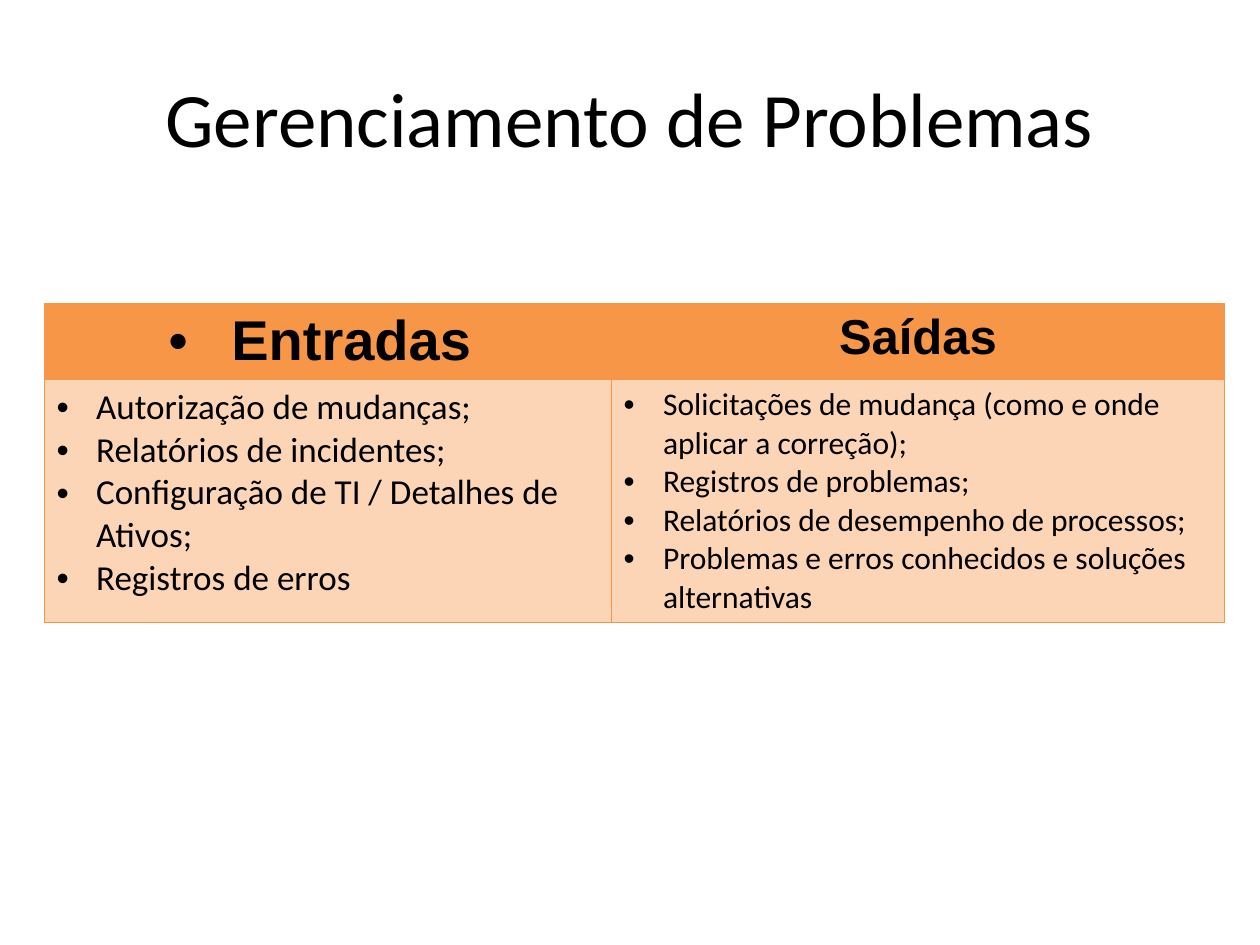
import pptx
import pptx.util
import pptx.dml.color
import pptx.enum.text
import pptx.oxml
import pptx.oxml.ns
from lxml import etree

Pt = pptx.util.Pt
ALIGN = pptx.enum.text.PP_ALIGN

# Content: one entry per table column
TITLE = "Gerenciamento de Problemas"
COLUMNS = [
    {"width": 324, "heading": "Entradas ", "heading_size": 32, "heading_indent": 36,
     "item_size": 20,
     "items": ["Autorização de mudanças;",
               "Relatórios de incidentes;",
               "Configuração de TI / Detalhes de Ativos;",
               "Registros de erros"]},
    {"width": 350.64, "heading": "Saídas", "heading_size": 28, "heading_indent": 0,
     "item_size": 18,
     "items": ["Solicitações de mudança (como e onde aplicar a correção);",
               "Registros de problemas;",
               "Relatórios de desempenho de processos;",
               "Problemas e erros conhecidos e soluções alternativas"]},
]
ROW_HEIGHTS = [43.4, 138.8]
ITEM_INDENT = 22.5
THEME = {"text": "000000", "accent": "F79646", "body_alpha": 40, "border": 0.75,
         "title_size": 44, "heading_font": "Arial", "body_font": "Calibri"}


def color(name):
    return pptx.dml.color.RGBColor.from_string(THEME[name])


def add_element(parent, tag, **attributes):
    element = etree.SubElement(parent, pptx.oxml.ns.qn(tag))
    for key, value in attributes.items():
        element.set(key, str(value))
    return element


def add_bullet(para, indent):
    props = para._p.get_or_add_pPr()
    props.set("marL", str(Pt(indent)))
    props.set("indent", str(-Pt(indent)))
    add_element(add_element(props, "a:buClr"), "a:srgbClr", val=THEME["text"])
    add_element(props, "a:buFont", typeface="Arial")
    add_element(props, "a:buChar", char="•")


def write(para, text, font, size, bold=False, align=ALIGN.LEFT, indent=0):
    para.text = text
    para.alignment = align
    if indent:
        add_bullet(para, indent)
    for span in para.runs:
        span.font.name = font
        span.font.size = Pt(size)
        span.font.bold = bold
        span.font.color.rgb = color("text")


def style_cell(cell, alpha=100):
    props = cell._tc.get_or_add_tcPr()
    for side in ("a:lnL", "a:lnR", "a:lnT", "a:lnB"):
        line = add_element(props, side, w=Pt(THEME["border"]))
        add_element(add_element(line, "a:solidFill"), "a:srgbClr", val=THEME["accent"])
    cell.fill.solid()
    cell.fill.fore_color.rgb = color("accent")
    if alpha < 100:
        shade = props.find(pptx.oxml.ns.qn("a:solidFill"))[0]
        add_element(shade, "a:alpha", val=alpha * 1000)


def main():
    deck = pptx.Presentation()
    deck.slide_width, deck.slide_height = Pt(720), Pt(540)
    page = deck.slides.add_slide(deck.slide_layouts[5])

    # Title
    title = page.shapes.title
    title.left, title.top, title.width, title.height = Pt(36), Pt(21.6), Pt(648), Pt(90)
    title.text_frame.vertical_anchor = pptx.enum.text.MSO_ANCHOR.MIDDLE
    write(title.text_frame.paragraphs[0], TITLE, THEME["body_font"],
          THEME["title_size"], align=ALIGN.CENTER)

    # Table
    total_width = sum(column["width"] for column in COLUMNS)
    table = page.shapes.add_table(len(ROW_HEIGHTS), len(COLUMNS), Pt(25.2), Pt(173.5),
                                  Pt(total_width), Pt(sum(ROW_HEIGHTS))).table
    table.first_row = table.horz_banding = False
    for row, height in zip(table.rows, ROW_HEIGHTS):
        row.height = Pt(height)

    # Heading and bulleted items of each column
    for index, column in enumerate(COLUMNS):
        table.columns[index].width = Pt(column["width"])
        heading, body = table.cell(0, index), table.cell(1, index)
        style_cell(heading)
        style_cell(body, THEME["body_alpha"])
        write(heading.text_frame.paragraphs[0], column["heading"], THEME["heading_font"],
              column["heading_size"], True, ALIGN.CENTER, column["heading_indent"])
        body.text_frame.text = "\n".join(column["items"])
        for para, item in zip(body.text_frame.paragraphs, column["items"]):
            write(para, item, THEME["body_font"], column["item_size"], indent=ITEM_INDENT)

    deck.save("out.pptx")


if __name__ == "__main__":
    main()
